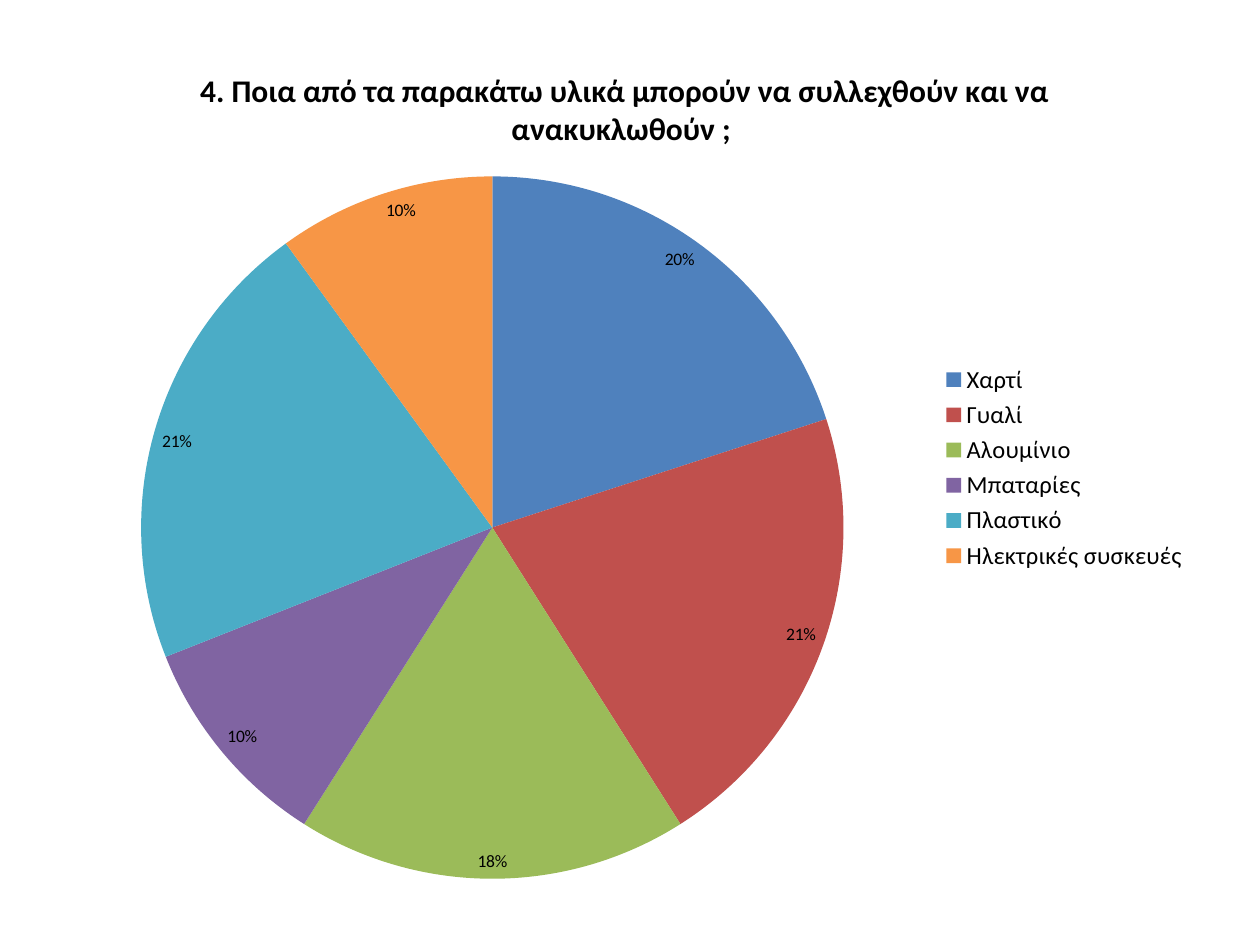
import pptx
import pptx.chart.data
import pptx.dml.color
import pptx.enum.chart
import pptx.oxml
import pptx.util

Pt = pptx.util.Pt
RGBColor = pptx.dml.color.RGBColor

BLACK = RGBColor(0x00, 0x00, 0x00)
BLUE = RGBColor(0x4F, 0x81, 0xBD)
RED = RGBColor(0xC0, 0x50, 0x4D)
GREEN = RGBColor(0x9B, 0xBB, 0x59)
PURPLE = RGBColor(0x80, 0x64, 0xA2)
TEAL = RGBColor(0x4B, 0xAC, 0xC6)
ORANGE = RGBColor(0xF7, 0x96, 0x46)

QUESTION = "4. Ποια από τα παρακάτω υλικά μπορούν να συλλεχθούν και να ανακυκλωθούν ; "
MATERIALS = [
    ("Χαρτί", 20, BLUE),
    ("Γυαλί", 21, RED),
    ("Αλουμίνιο", 18, GREEN),
    ("Μπαταρίες", 10, PURPLE),
    ("Πλαστικό ", 21, TEAL),
    ("Ηλεκτρικές συσκευές", 10, ORANGE),
]


def format_font(font, size, bold=False, color=BLACK):
    font.name = "Calibri"
    font.size = Pt(size)
    font.bold = bold
    font.color.rgb = color


def write_text(text_frame, text, **font_format):
    """Put one formatted run of text in the frame."""
    run = text_frame.paragraphs[0].add_run()
    run.text = text
    format_font(run.font, **font_format)


def place_plot(chart, x, y, width, height):
    """Fix the inner plot area, in fractions of the chart."""
    plot_area = chart.plots[0]._element.getparent()
    for layout in plot_area.findall(pptx.oxml.ns.qn("c:layout")):
        plot_area.remove(layout)
    settings = [("layoutTarget", "inner"), ("xMode", "edge"), ("yMode", "edge"),
                ("x", x), ("y", y), ("w", width), ("h", height)]
    children = "".join(f'<c:{name} val="{value}"/>' for name, value in settings)
    plot_area.insert(0, pptx.oxml.parse_xml(
        f"<c:layout {pptx.oxml.ns.nsdecls('c')}>"
        f"<c:manualLayout>{children}</c:manualLayout></c:layout>"))


class SlideBuilder:
    title_size = 18
    legend_size = 14
    label_size = 10

    def __init__(self, slide):
        self.slide = slide

    def pie(self, title, slices, left, top, width, height):
        names, values, colors = zip(*slices)
        data = pptx.chart.data.CategoryChartData(number_format="General")
        data.categories = names
        data.add_series("Series 1", values)
        chart = self.slide.shapes.add_chart(
            pptx.enum.chart.XL_CHART_TYPE.PIE,
            Pt(left), Pt(top), Pt(width), Pt(height), data).chart
        format_font(chart.font, self.label_size)
        chart.has_title = True
        write_text(chart.chart_title.text_frame, title, size=self.title_size, bold=True)

        chart.has_legend = True
        chart.legend.position = pptx.enum.chart.XL_LEGEND_POSITION.RIGHT
        chart.legend.include_in_layout = False
        format_font(chart.legend.font, self.legend_size)

        plot = chart.plots[0]
        plot.vary_by_categories = True
        for index, color in enumerate(colors):
            fill = plot.series[0].points[index].format.fill
            fill.solid()
            fill.fore_color.rgb = color

        plot.has_data_labels = True
        labels = plot.data_labels
        labels.show_percentage = True
        labels.show_value = False
        labels.number_format = "0%"
        labels.number_format_is_linked = False
        labels.position = pptx.enum.chart.XL_LABEL_POSITION.INSIDE_END
        format_font(labels.font, self.label_size)
        return chart


def main():
    presentation = pptx.Presentation()
    presentation.slide_width = Pt(720)
    presentation.slide_height = Pt(540)
    blank_layout = presentation.slide_layouts[6]
    builder = SlideBuilder(presentation.slides.add_slide(blank_layout))
    chart = builder.pie(QUESTION, MATERIALS, left=28, top=22.5, width=658, height=489.5)
    place_plot(chart, x=0.08, y=0.16, width=0.61, height=0.82)
    presentation.save("out.pptx")


if __name__ == "__main__":
    main()
